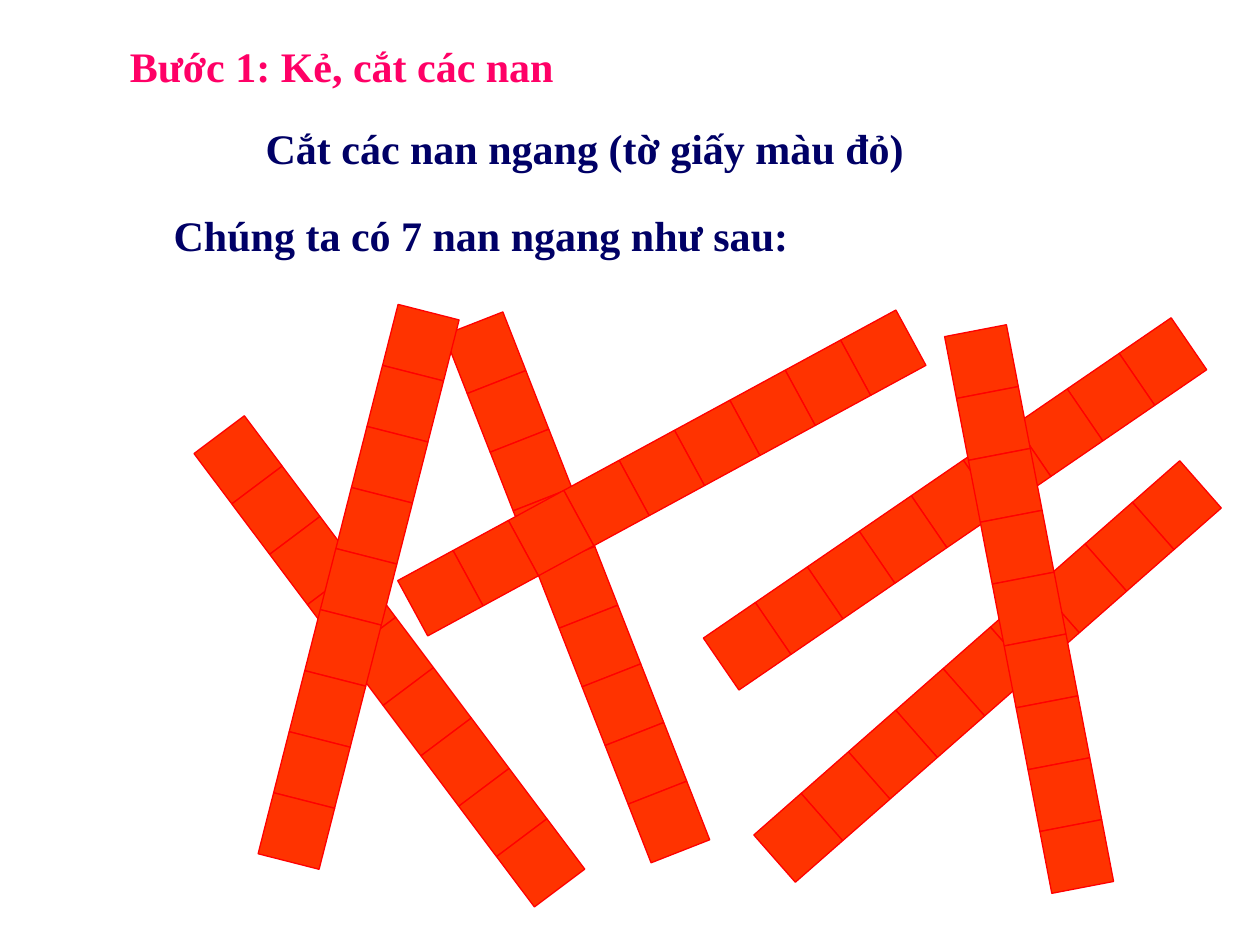
from dataclasses import dataclass
from math import cos, radians, sin

from pptx import Presentation
from pptx.dml.color import RGBColor
from pptx.enum.shapes import MSO_SHAPE as Kind
from pptx.enum.text import MSO_ANCHOR as Anchor, MSO_AUTO_SIZE as Fit, PP_ALIGN as Align
from pptx.util import Pt

PX = 9144
CELL = 50
COUNT = 9
FONT = "Times New Roman"
ORANGE = RGBColor(0xFF, 0x33, 0x00)
RED = RGBColor(0xFF, 0x00, 0x00)
PINK = RGBColor(0xFF, 0x00, 0x66)
NAVY = RGBColor(0x00, 0x00, 0x66)


@dataclass(frozen=True)
class Strip:
    left: int
    top: int
    angle: float


@dataclass(frozen=True)
class Label:
    text: str
    left: int
    top: int
    width: int
    color: RGBColor
    height: int = 50


STRIPS = [
    Strip(909, 376, 48.7),
    Strip(164, 340, 323.1),
    Strip(360, 255, 338.6),
    Strip(309, 247, 14.3),
    Strip(898, 262, 55.6),
    Strip(754, 262, 349.1),
    Strip(676, 255, 61.5),
]
TITLE = Label("Bước 1: Kẻ, cắt các nan", 93, 27, 440, PINK)
LINES = [
    Label("Chúng ta có 7 nan ngang như sau:", 128, 161, 523, NAVY),
    Label("Cắt các nan ngang (tờ giấy màu đỏ)", 201, 92, 607, NAVY),
]


def emu(size: float) -> int:
    return round(size * PX)


def draw_strip(slide, strip: Strip) -> None:
    group = slide.shapes.add_group_shape()
    turn = radians(strip.angle)
    for step in range(COUNT):
        left = strip.left - step * CELL * sin(turn)
        top = strip.top + step * CELL * cos(turn)
        cell = group.shapes.add_shape(
            Kind.RECTANGLE, emu(left), emu(top), emu(CELL), emu(CELL)
        )
        cell.rotation = strip.angle
        cell.shadow.inherit = False
        cell.fill.solid()
        cell.fill.fore_color.rgb = ORANGE
        cell.line.color.rgb = RED
        cell.line.width = Pt(0.75)


def write(box, label: Label) -> None:
    box.left, box.top = emu(label.left), emu(label.top)
    box.width, box.height = emu(label.width), emu(label.height)
    frame = box.text_frame
    frame.text = label.text
    frame.word_wrap = True
    frame.auto_size = Fit.SHAPE_TO_FIT_TEXT
    frame.vertical_anchor = Anchor.TOP
    para = frame.paragraphs[0]
    para.alignment = Align.LEFT
    font = para.runs[0].font
    font.name = FONT
    font.size = Pt(24)
    font.bold = True
    font.color.rgb = label.color


def main() -> None:
    deck = Presentation()
    deck.slide_width, deck.slide_height = emu(1000), emu(750)
    slide = deck.slides.add_slide(deck.slide_layouts[5])
    write(slide.shapes.title, TITLE)
    for strip in STRIPS:
        draw_strip(slide, strip)
    for label in LINES:
        write(slide.shapes.add_textbox(0, 0, 0, 0), label)
    deck.save("out.pptx")


if __name__ == "__main__":
    main()
